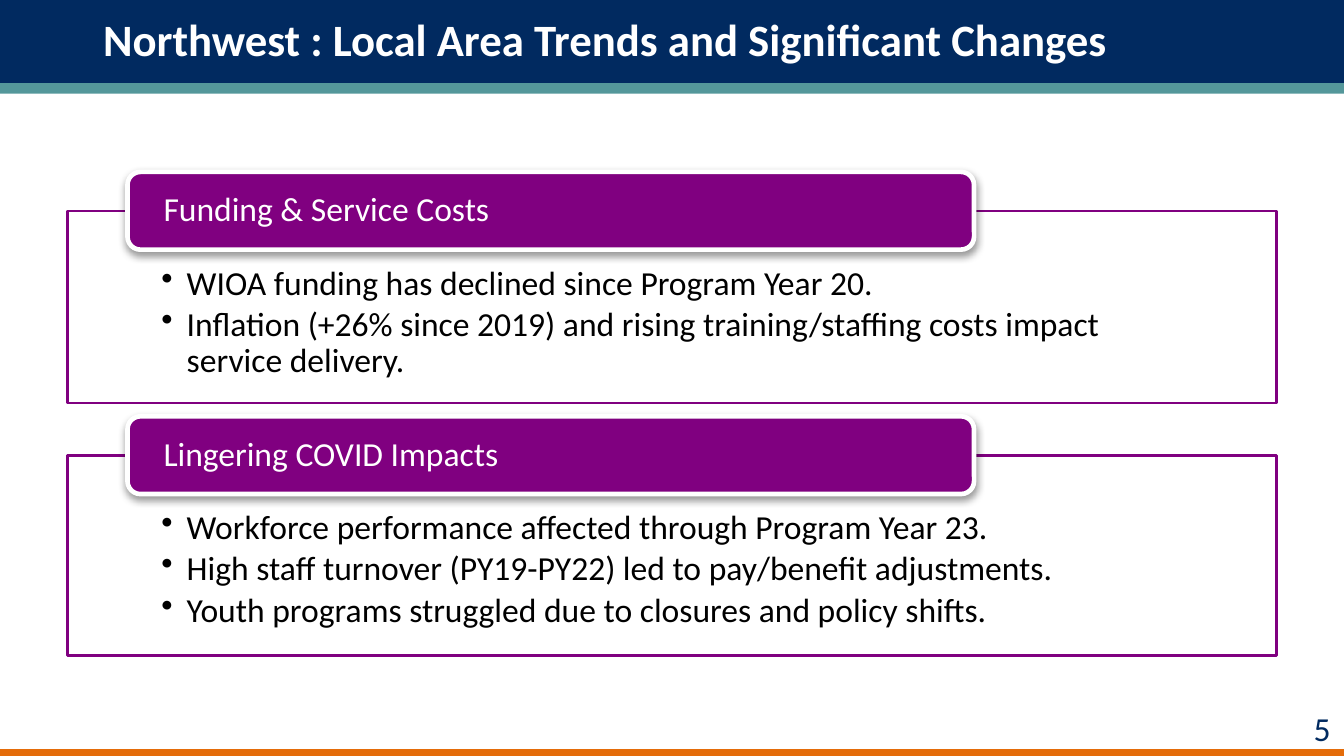
from lxml import etree
from pptx import Presentation
from pptx.dml.color import RGBColor
from pptx.enum.shapes import MSO_SHAPE
from pptx.enum.text import MSO_ANCHOR, PP_ALIGN
from pptx.oxml import parse_xml
from pptx.oxml.ns import nsdecls, qn
from pptx.util import Cm, Pt

RECTANGLE, ROUNDED = MSO_SHAPE.RECTANGLE, MSO_SHAPE.ROUNDED_RECTANGLE
LEFT, RIGHT = PP_ALIGN.LEFT, PP_ALIGN.RIGHT
TOP, MIDDLE = MSO_ANCHOR.TOP, MSO_ANCHOR.MIDDLE
NAVY, TEAL, ORANGE, PURPLE = "012A60", "54979A", "E46C0A", "800080"
WHITE, BLACK = "FFFFFF", "000000"

SHADOW = (
    f'<a:outerShdw {nsdecls("a")} blurRad="52070" dist="25400" dir="5400000" rotWithShape="0">'
    '<a:srgbClr val="000000"><a:alpha val="40000"/></a:srgbClr></a:outerShdw>'
)

SECTIONS = [
    # heading, top and height of the frame in cm, bullet points
    ("Funding & Service Costs", 3.99, 3.63, [
        "WIOA funding has declined since Program Year 20.",
        "Inflation (+26% since 2019) and rising training/staffing costs impact service delivery.",
    ]),
    ("Lingering COVID Impacts", 8.61, 3.78, [
        "Workforce performance affected through Program Year 23.",
        "High staff turnover (PY19-PY22) led to pay/benefit adjustments.",
        "Youth programs struggled due to closures and policy shifts.",
    ]),
]


def add_box(kind, left, top, width, height, fill, line=None, line_width=0):
    shape = slide.shapes.add_shape(kind, Cm(left), Cm(top), Cm(width), Cm(height))
    shape.fill.solid()
    shape.fill.fore_color.rgb = RGBColor.from_string(fill)
    if line:
        shape.line.color.rgb = RGBColor.from_string(line)
        shape.line.width = Pt(line_width)
    else:
        shape.line.fill.background()
    shape.shadow.inherit = False
    return shape


def write(shape, lines, color, size=18, bold=False, align=LEFT, anchor=MIDDLE,
          margins=(0.25, 0.13, 0.25, 0.13), bullets=False):
    frame = shape.text_frame
    frame.word_wrap = True
    frame.vertical_anchor = anchor
    (frame.margin_left, frame.margin_top,
     frame.margin_right, frame.margin_bottom) = map(Cm, margins)
    frame.text = "\n".join(lines)
    for paragraph in frame.paragraphs:
        paragraph.alignment = align
        paragraph.line_spacing = 0.9
        if bullets:
            paragraph.space_after = Pt(2.7)
            properties = paragraph._p.get_or_add_pPr()
            properties.set("marL", str(Cm(0.48)))
            properties.set("indent", str(-Cm(0.48)))
            etree.SubElement(properties, qn("a:buChar"), char="•")
        paragraph.font.name = "Calibri"
        paragraph.font.size = Pt(size)
        paragraph.font.bold = bold
        paragraph.font.color.rgb = RGBColor.from_string(color)


presentation = Presentation()
presentation.slide_width, presentation.slide_height = Cm(25.4), Cm(14.29)
slide = presentation.slides.add_slide(presentation.slide_layouts[6])

# Header and footer bands
for top, height, color in [(0, 1.57, NAVY), (1.57, 0.2, TEAL), (14.16, 0.13, ORANGE)]:
    add_box(RECTANGLE, 0, top, 25.4, height, color)

# Title and slide number
title = slide.shapes.add_textbox(Cm(1.7), Cm(0), Cm(22.73), Cm(1.57))
write(title, ["Northwest : Local Area Trends and Significant Changes"], WHITE, 24, bold=True)
number = slide.shapes.add_textbox(Cm(23.93), Cm(13.31), Cm(1.47), Cm(1.02))
write(number, ["5"], NAVY, align=RIGHT)

# Framed bullet lists, each with a heading over its top edge
for heading, top, height, points in SECTIONS:
    frame_box = add_box(RECTANGLE, 1.27, top, 22.86, height, WHITE, PURPLE, 1.5)
    write(frame_box, points, BLACK, anchor=TOP, margins=(1.78, 1.04, 1.78, 0.36), bullets=True)

    heading_box = add_box(ROUNDED, 2.41, top - 0.74, 16, 1.47, PURPLE, WHITE, 2.5)
    heading_box.element.spPr.find(qn("a:effectLst")).append(parse_xml(SHADOW))
    write(heading_box, [heading], WHITE, margins=(0.61, 0, 0.61, 0))

presentation.save("out.pptx")
